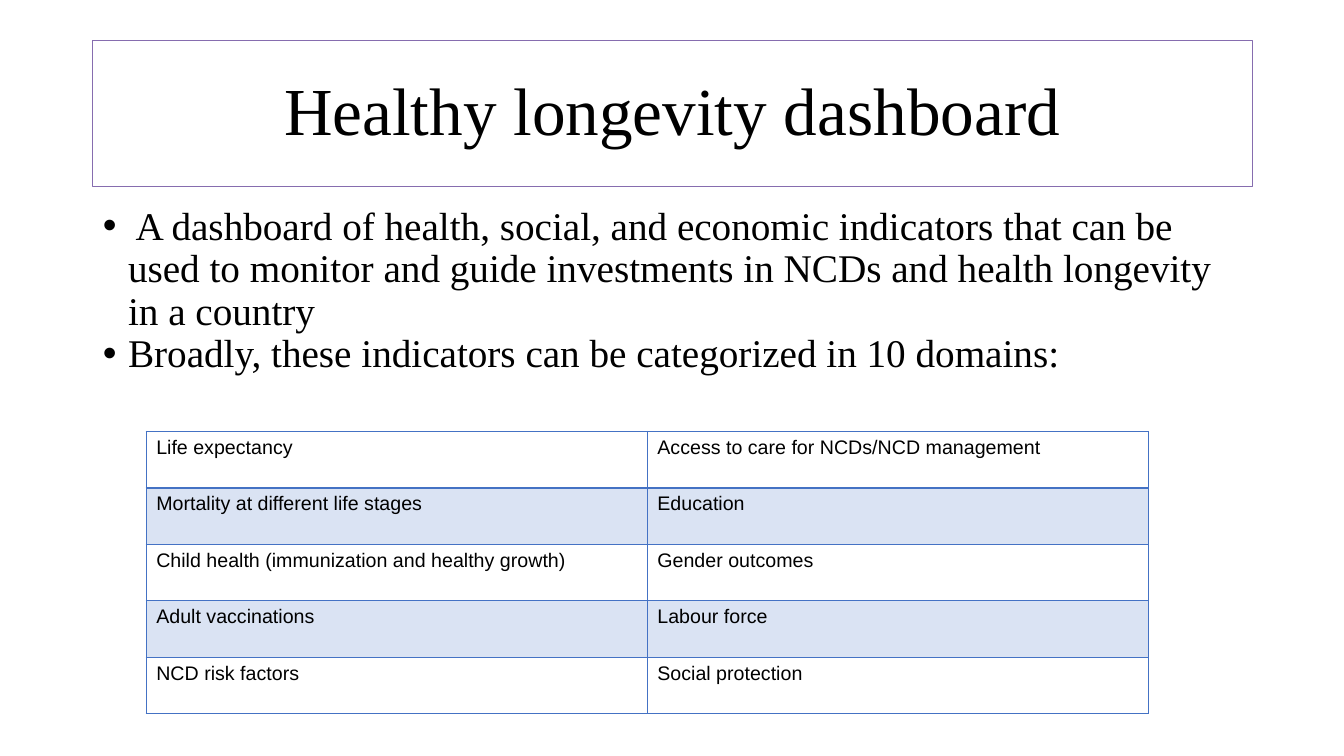
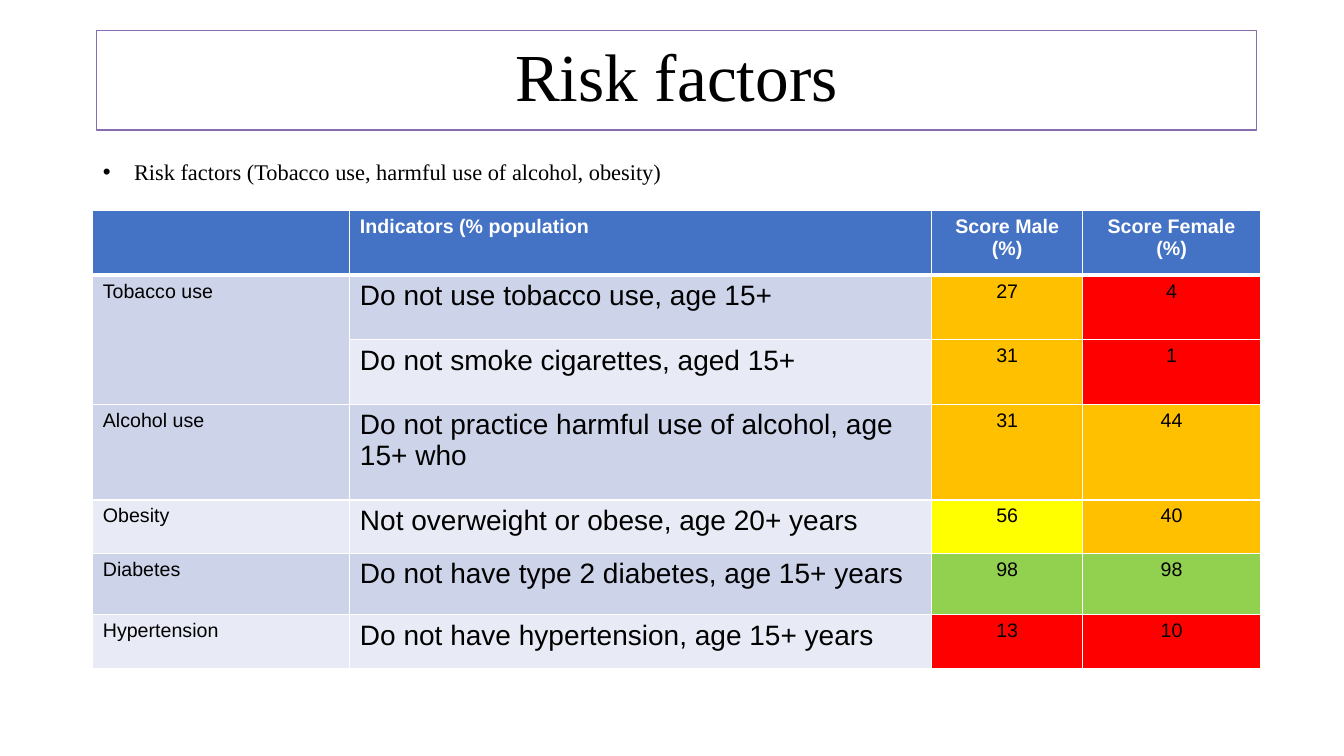
from lxml.etree import SubElement
from pptx import Presentation
from pptx.dml.color import RGBColor
from pptx.enum.text import MSO_ANCHOR, MSO_AUTO_SIZE, PP_ALIGN
from pptx.oxml.ns import qn
from pptx.util import Pt

PX = 9144  # EMU per px, 100 px to the inch
SERIF, SANS = "Times New Roman", "Arial"
COLORS = {
    "black": "000000", "white": "FFFFFF", "frame": "866DAF",
    "blue": "4472C4", "tint": "DAE3F3", "band": "CDD4EA", "pale": "E8EBF5",
    "red": "FF0000", "orange": "FFC000", "yellow": "FFFF00", "green": "92D050",
}
LIMITS = [(25, "red"), (50, "orange"), (75, "yellow"), (101, "green")]

POINTS = [
    " A dashboard of health, social, and economic indicators that can be used"
    " to monitor and guide investments in NCDs and health longevity in a country",
    "Broadly, these indicators can be categorized in 10 domains:",
]
DOMAINS = [
    ("Life expectancy", "Access to care for NCDs/NCD management"),
    ("Mortality at different life stages", "Education"),
    ("Child health (immunization and healthy growth)", "Gender outcomes"),
    ("Adult vaccinations", "Labour force"),
    ("NCD risk factors", "Social protection"),
]
RISKS = ["Risk factors (Tobacco use, harmful use of alcohol, obesity)"]
HEADS = ("", "Indicators (% population", "Score Male (%)", "Score Female (%)")
SCORES = [
    ("Tobacco use", "Do not use tobacco use, age 15+", 27, 4),
    ("", "Do not smoke cigarettes, aged 15+", 31, 1),
    ("Alcohol use", "Do not practice harmful use of alcohol, age 15+ who", 31, 44),
    ("Obesity", "Not overweight or obese, age 20+ years", 56, 40),
    ("Diabetes", "Do not have type 2 diabetes, age 15+ years", 98, 98),
    ("Hypertension", "Do not have hypertension, age 15+ years", 13, 10),
]


def rgb(name):
    return RGBColor.from_string(COLORS[name])


def style(par, face, size, color="black", bold=False, align=PP_ALIGN.LEFT):
    font = par.font
    font.name, font.size, font.bold = face, Pt(size), bold
    font.color.rgb = rgb(color)
    par.alignment = align


def place(shape, box):
    shape.left, shape.top, shape.width, shape.height = (n * PX for n in box)


def add_slide(deck, title, title_box, points, body_box, size, indent, lead):
    """Add a slide with a framed title and a bullet list."""
    slide = deck.slides.add_slide(deck.slide_layouts[1])
    head, body = slide.placeholders
    place(head, title_box)
    head.line.color.rgb, head.line.width = rgb("frame"), Pt(0.75)
    frame = head.text_frame
    frame.text, frame.vertical_anchor = title, MSO_ANCHOR.MIDDLE
    frame.auto_size = MSO_AUTO_SIZE.NONE
    par = frame.paragraphs[0]
    style(par, SERIF, 48, align=PP_ALIGN.CENTER)
    par.line_spacing = 0.9

    place(body, body_box)
    frame = body.text_frame
    frame.text, frame.auto_size = "\n".join(points), MSO_AUTO_SIZE.NONE
    for par in frame.paragraphs:
        style(par, SERIF, size)
        par.line_spacing, par.space_before = lead, Pt(0)
        props = par._p.get_or_add_pPr()
        props.set("marL", str(indent * PX))
        props.set("indent", str(-indent * PX))
    return slide


def add_edges(cell, color, top, bottom):
    props = cell._tc.get_or_add_tcPr()
    for side, width in zip("LRTB", (1, 1, top, bottom)):
        line = SubElement(props, qn(f"a:ln{side}"), w=str(Pt(width)))
        fill = SubElement(line, qn("a:solidFill"))
        SubElement(fill, qn("a:srgbClr"), val=COLORS[color])


def add_grid(slide, left, top, cols, heights, rows, edge, rule, look):
    """Add a table; rule is the line width under row one, and
    look(row, col, value) gives a cell's fill and its text style."""
    table = slide.shapes.add_table(
        len(rows), len(cols), left * PX, top * PX,
        sum(cols) * PX, sum(heights) * PX).table
    table.first_row = table.horz_banding = False
    for col, width in zip(table.columns, cols):
        col.width = width * PX
    for r, (row, height) in enumerate(zip(rows, heights)):
        table.rows[r].height = height * PX
        for c, value in enumerate(row):
            cell = table.cell(r, c)
            fill, text = look(r, c, value)
            add_edges(cell, edge, rule if r == 1 else 1, rule if r == 0 else 1)
            cell.fill.solid()
            cell.fill.fore_color.rgb = rgb(fill)
            cell.text = str(value)
            style(cell.text_frame.paragraphs[0], SANS, **text)
    return table


def domain_look(row, col, value):
    return ("tint" if row % 2 else "white"), {"size": 14}


def score_look(row, col, value):
    align = PP_ALIGN.CENTER if col > 1 else PP_ALIGN.LEFT
    if row == 0:
        return "blue", {"size": 14, "color": "white", "bold": True, "align": align}
    if col > 1:
        fill = next(name for limit, name in LIMITS if value < limit)
    else:
        fill = "band" if row % 2 else "pale"
    return fill, {"size": 20 if col == 1 else 14, "align": align}


def main():
    deck = Presentation()
    deck.slide_width, deck.slide_height = 1333 * PX, 750 * PX

    slide = add_slide(deck, "Healthy longevity dashboard", (92, 40, 1150, 145),
                      POINTS, (92, 200, 1150, 476), 28, 25, 0.9)
    add_grid(slide, 145, 428, [497] * 2, [56] * 5, DOMAINS, "blue", 2, domain_look)

    slide = add_slide(deck, "Risk factors", (96, 30, 1150, 99),
                      RISKS, (92, 152, 583, 37), 16, 31, 1.0)
    table = add_grid(slide, 92, 209, [255, 577, 150, 176],
                     [64, 64, 64, 95, 53, 61, 53], [HEADS, *SCORES],
                     "white", 3, score_look)
    table.cell(1, 0).merge(table.cell(2, 0))
    deck.save("out.pptx")


if __name__ == "__main__":
    main()
